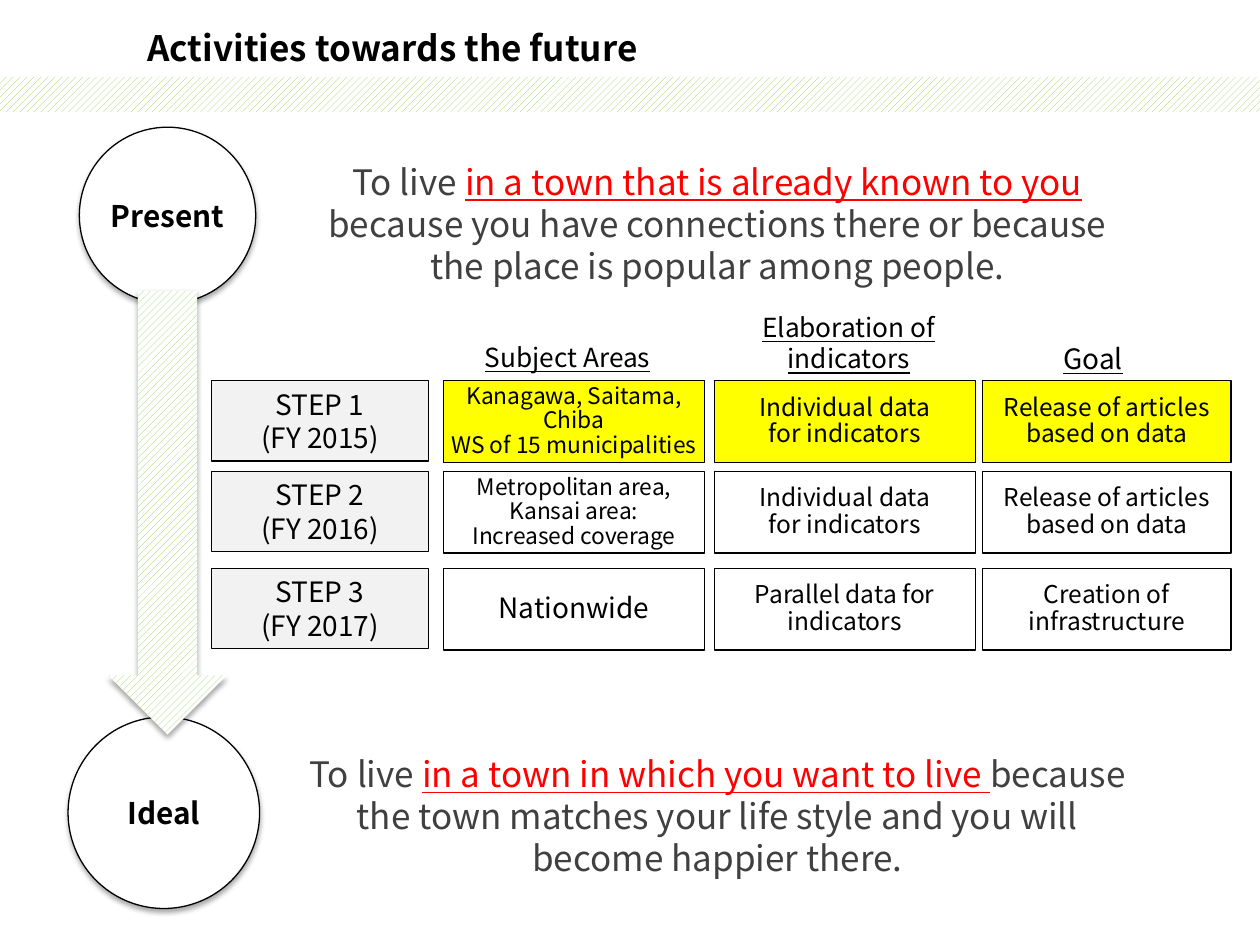
from dataclasses import dataclass

from lxml.etree import SubElement
from pptx import Presentation
from pptx.dml.color import RGBColor
from pptx.enum.dml import MSO_PATTERN as Pattern
from pptx.enum.shapes import MSO_SHAPE as Shape
from pptx.enum.text import MSO_ANCHOR as Anchor, MSO_AUTO_SIZE as AutoSize, PP_ALIGN as Align
from pptx.oxml.ns import qn
from pptx.util import Inches, Pt

FONT = "Noto Sans CJK JP"
COLORS = {
    "black": "000000", "white": "FFFFFF", "gray": "404040", "light": "F2F2F2",
    "red": "FF0000", "yellow": "FFFF00", "green": "92D050",
}


@dataclass(frozen=True)
class Box:
    left: float
    top: float
    width: float
    height: float

    def emu(self) -> tuple:
        return tuple(Inches(v) for v in (self.left, self.top, self.width, self.height))


@dataclass(frozen=True)
class Run:
    text: str
    size: float
    color: str = "black"
    bold: bool = False
    underline: bool = False


@dataclass(frozen=True)
class Cell:
    lines: tuple[str, ...]
    size: float = 14
    inset: bool = False


@dataclass(frozen=True)
class Step:
    top: float
    label: tuple[str, str]
    fill: str
    cells: tuple[Cell, Cell, Cell]


@dataclass(frozen=True)
class Header:
    box: Box
    text: str
    size: float
    wrap: bool = False


@dataclass(frozen=True)
class Statement:
    top: float
    emphasis: str
    rest: str


@dataclass(frozen=True)
class Stage:
    box: Box
    text: str


def rgb(name: str) -> RGBColor:
    return RGBColor.from_string(COLORS[name])


def write(shape, paragraphs, align=Align.CENTER, anchor=Anchor.MIDDLE,
          inset=True, spacing=None, wrap=True) -> None:
    """Fill a shape with paragraphs, each one a list of runs."""
    tf = shape.text_frame
    tf.word_wrap = wrap
    tf.vertical_anchor = anchor
    if not inset:
        tf.margin_left = tf.margin_right = tf.margin_top = tf.margin_bottom = 0
    for i, runs in enumerate(paragraphs):
        p = tf.add_paragraph() if i else tf.paragraphs[0]
        p.alignment = align
        if spacing:
            p.line_spacing = spacing
        for run in runs:
            r = p.add_run()
            r.text = run.text
            r.font.name = FONT
            r.font.size = Pt(run.size)
            r.font.bold = run.bold
            r.font.underline = run.underline
            r.font.color.rgb = rgb(run.color)


def add_shape(s, kind: Shape, box: Box, fill: str, outlined: bool = True):
    sp = s.shapes.add_shape(kind, *box.emu())
    sp.shadow.inherit = False
    sp.fill.solid()
    sp.fill.fore_color.rgb = rgb(fill)
    if outlined:
        sp.line.color.rgb = rgb("black")
        sp.line.width = Pt(0.75)
    else:
        sp.line.fill.background()
    return sp


def add_hatched(s, kind: Shape, box: Box):
    sp = add_shape(s, kind, box, "white", outlined=False)
    sp.fill.patterned()
    sp.fill.pattern = Pattern.WIDE_UPWARD_DIAGONAL
    sp.fill.fore_color.rgb = rgb("green")
    sp.fill.back_color.rgb = rgb("white")
    return sp


def drop_shadow(sp) -> None:
    effects = sp._element.spPr.find(qn("a:effectLst"))
    shadow = SubElement(effects, qn("a:outerShdw"), blurRad=str(Pt(3.1)),
                        dist=str(Pt(1.8)), dir="5400000", rotWithShape="0")
    color = SubElement(shadow, qn("a:srgbClr"), val=COLORS["black"])
    SubElement(color, qn("a:alpha"), val="35000")


def add_title(s, text: str) -> None:
    title = s.shapes.title
    title.left, title.top, title.width, title.height = Box(1.07, 0.16, 6.8, 0.44).emu()
    title.text_frame.auto_size = AutoSize.NONE
    write(title, [[Run(text, 20, bold=True)]], Align.LEFT, Anchor.TOP)


def add_statement(s, item: Statement) -> None:
    sp = s.shapes.add_textbox(*Box(2.33, item.top, 6.73, 1.28).emu())
    write(sp, [[Run("To live ", 20, "gray"),
                Run(item.emphasis, 20, "red", underline=True),
                Run(item.rest, 20, "gray")]])


def add_stage(s, stage: Stage) -> None:
    sp = add_shape(s, Shape.OVAL, stage.box, "white")
    drop_shadow(sp)
    write(sp, [[Run(stage.text, 17, bold=True)]], inset=False)


def add_step(s, step: Step) -> None:
    label = add_shape(s, Shape.RECTANGLE, Box(1.68, step.top, 1.72, 0.64), "light")
    write(label, [[Run(line, 16)] for line in step.label])
    for (left, width), cell in zip(COLUMNS, step.cells):
        sp = add_shape(s, Shape.RECTANGLE, Box(left, step.top, width, 0.65), step.fill)
        write(sp, [[Run(line, cell.size)] for line in cell.lines],
              inset=cell.inset, spacing=0.9)


def add_header(s, header: Header) -> None:
    sp = s.shapes.add_textbox(*header.box.emu())
    write(sp, [[Run(header.text, header.size, underline=True)]],
          anchor=Anchor.TOP, wrap=header.wrap)


COLUMNS = ((3.52, 2.07), (5.67, 2.07), (7.8, 1.97))
INDIVIDUAL = Cell(("Individual data", "for indicators"))
RELEASE = Cell(("Release of articles based on data",))

STEPS = (
    Step(3.02, ("STEP 1", "(FY 2015)"), "yellow", (
        Cell(("Kanagawa, Saitama, Chiba", "WS of 15 municipalities"), 13),
        INDIVIDUAL, RELEASE)),
    Step(3.74, ("STEP 2", "(FY 2016)"), "white", (
        Cell(("Metropolitan area, Kansai area:", "Increased coverage"), 13, inset=True),
        INDIVIDUAL, RELEASE)),
    Step(4.51, ("STEP 3", "(FY 2017)"), "white", (
        Cell(("Nationwide",), 16, inset=True),
        Cell(("Parallel data for", "indicators")),
        Cell(("Creation of infrastructure",)))),
)
HEADERS = (
    Header(Box(3.75, 2.66, 1.51, 0.35), "Subject Areas", 15),
    Header(Box(5.89, 2.42, 1.69, 0.61), "Elaboration of indicators", 15, wrap=True),
    Header(Box(8.34, 2.66, 0.67, 0.37), "Goal", 16),
)
STATEMENTS = (
    Statement(1.13, "in a town that is already known to you ",
              "because you have connections there or because the place is popular among people."),
    Statement(5.83, "in a town in which you want to live ",
              "because the town matches your life style and you will become happier there."),
)
STAGES = (
    Stage(Box(0.63, 1.01, 1.4, 1.4), "Present"),
    Stage(Box(0.54, 5.69, 1.52, 1.52), "Ideal"),
)


def main() -> None:
    prs = Presentation()
    prs.slide_width, prs.slide_height = Inches(10), Inches(7.5)
    s = prs.slides.add_slide(prs.slide_layouts[5])
    add_title(s, "Activities towards the future")
    for statement in STATEMENTS:
        add_statement(s, statement)
    for stage in STAGES:
        add_stage(s, stage)
    add_hatched(s, Shape.RECTANGLE, Box(0, 0.61, 10, 0.28))
    drop_shadow(add_hatched(s, Shape.DOWN_ARROW, Box(0.86, 2.31, 0.94, 3.52)))
    for step in STEPS:
        add_step(s, step)
    for header in HEADERS:
        add_header(s, header)
    prs.save("out.pptx")


if __name__ == "__main__":
    main()
